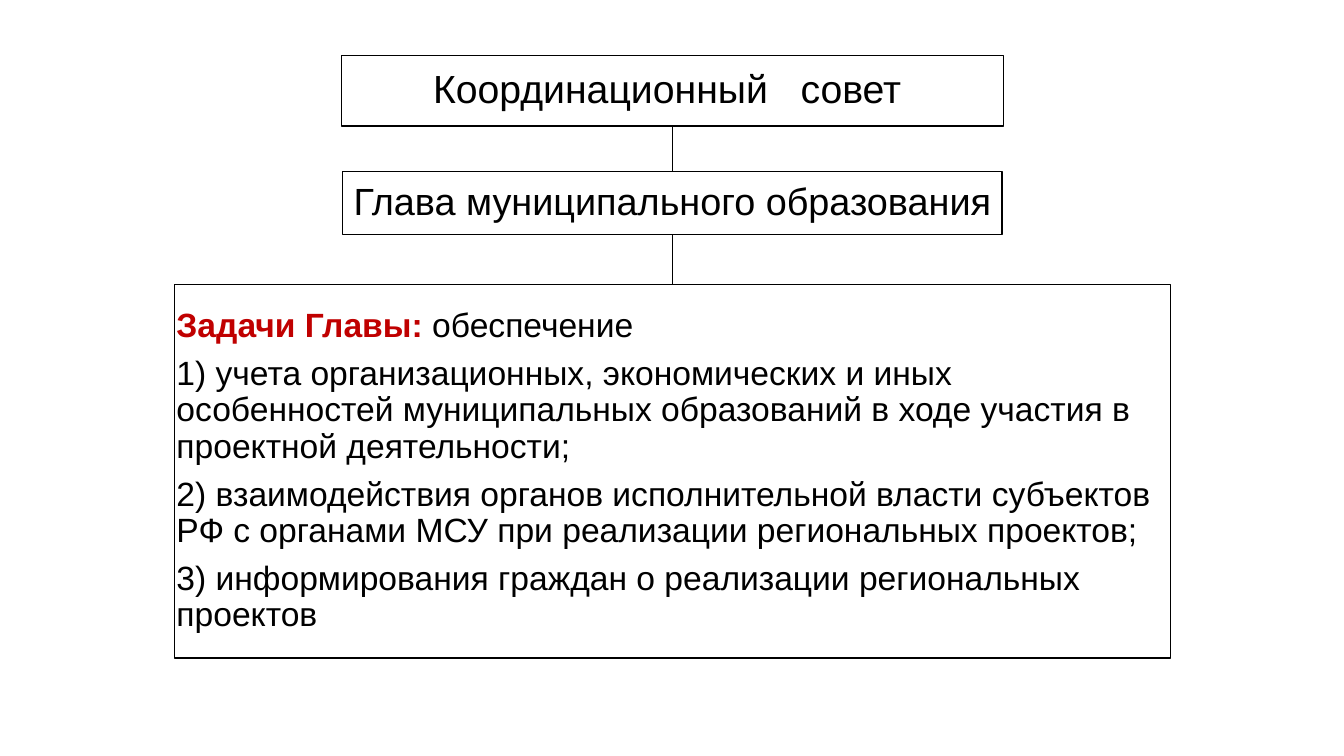
from dataclasses import dataclass

import lxml.etree
import pptx
import pptx.dml.color
import pptx.enum.shapes
import pptx.enum.text
import pptx.oxml.ns
import pptx.util

Inches = pptx.util.Inches
Pt = pptx.util.Pt
ALIGN = pptx.enum.text.PP_ALIGN

COLORS = {"black": "000000", "white": "FFFFFF", "red": "C00000"}
FONT = "Arial"
CENTER_X = 6.67
LINE_WIDTH = 1
BOTTOM, TOP = 2, 0


@dataclass(frozen=True)
class TextRun:
    text: str
    color: str = "black"
    bold: bool = False


@dataclass(frozen=True)
class Box:
    top: float
    width: float
    height: float
    size: int
    paragraphs: tuple[tuple[TextRun, ...], ...]
    alignment: ALIGN = ALIGN.CENTER


BOXES = (
    Box(0.55, 6.57, 0.7, 28, ((TextRun("Координационный   совет "),),)),
    Box(1.7, 6.54, 0.63, 27, ((TextRun("Глава муниципального образования"),),)),
    Box(2.82, 9.88, 3.71, 24, (
        (TextRun("Задачи Главы: ", "red", True), TextRun("обеспечение")),
        (TextRun("1) учета организационных, экономических и иных особенностей "
                 "муниципальных образований в ходе участия в проектной деятельности;"),),
        (TextRun("2) взаимодействия органов исполнительной власти субъектов РФ "
                 "с органами МСУ при реализации региональных проектов;"),),
        (TextRun("3) информирования граждан о реализации региональных проектов"),),
    ), ALIGN.LEFT),
)


def rgb(name: str) -> pptx.dml.color.RGBColor:
    return pptx.dml.color.RGBColor.from_string(COLORS[name])


def add_text(shape, box: Box) -> None:
    frame = shape.text_frame
    frame.word_wrap = True
    frame.vertical_anchor = pptx.enum.text.MSO_ANCHOR.MIDDLE
    frame.margin_left = frame.margin_right = Inches(0.02)
    frame.margin_top = frame.margin_bottom = Inches(0.02)
    for index, text_runs in enumerate(box.paragraphs):
        paragraph = frame.add_paragraph() if index else frame.paragraphs[0]
        paragraph.alignment = box.alignment
        paragraph.line_spacing = 0.9
        paragraph.space_after = Pt(box.size * 0.35)
        for text_run in text_runs:
            run = paragraph.add_run()
            run.text = text_run.text
            run.font.name = FONT
            run.font.size = Pt(box.size)
            run.font.bold = text_run.bold
            run.font.color.rgb = rgb(text_run.color)


def add_box(slide, box: Box):
    """Draw a bordered box centred on the chart's axis."""
    shape = slide.shapes.add_shape(
        pptx.enum.shapes.MSO_SHAPE.RECTANGLE,
        Inches(CENTER_X - box.width / 2), Inches(box.top),
        Inches(box.width), Inches(box.height))
    shape.shadow.inherit = False
    shape.fill.solid()
    shape.fill.fore_color.rgb = rgb("white")
    shape.line.color.rgb = rgb("black")
    shape.line.width = Pt(LINE_WIDTH)
    add_text(shape, box)
    return shape


def join(slide, upper, lower) -> None:
    """Link the bottom of one box to the top of the next."""
    connector = slide.shapes.add_connector(
        pptx.enum.shapes.MSO_CONNECTOR.STRAIGHT, 0, 0, 0, 0)
    connector.begin_connect(upper, BOTTOM)
    connector.end_connect(lower, TOP)
    connector.line.color.rgb = rgb("black")
    connector.line.width = Pt(LINE_WIDTH)
    properties = connector.element.find(pptx.oxml.ns.qn("p:spPr"))
    lxml.etree.SubElement(properties, pptx.oxml.ns.qn("a:effectLst"))


def main() -> None:
    presentation = pptx.Presentation()
    presentation.slide_width = Inches(13.33)
    presentation.slide_height = Inches(7.5)
    slide = presentation.slides.add_slide(presentation.slide_layouts[6])
    shapes = [add_box(slide, box) for box in BOXES]
    for upper, lower in zip(shapes, shapes[1:]):
        join(slide, upper, lower)
    presentation.save("out.pptx")


if __name__ == "__main__":
    main()
